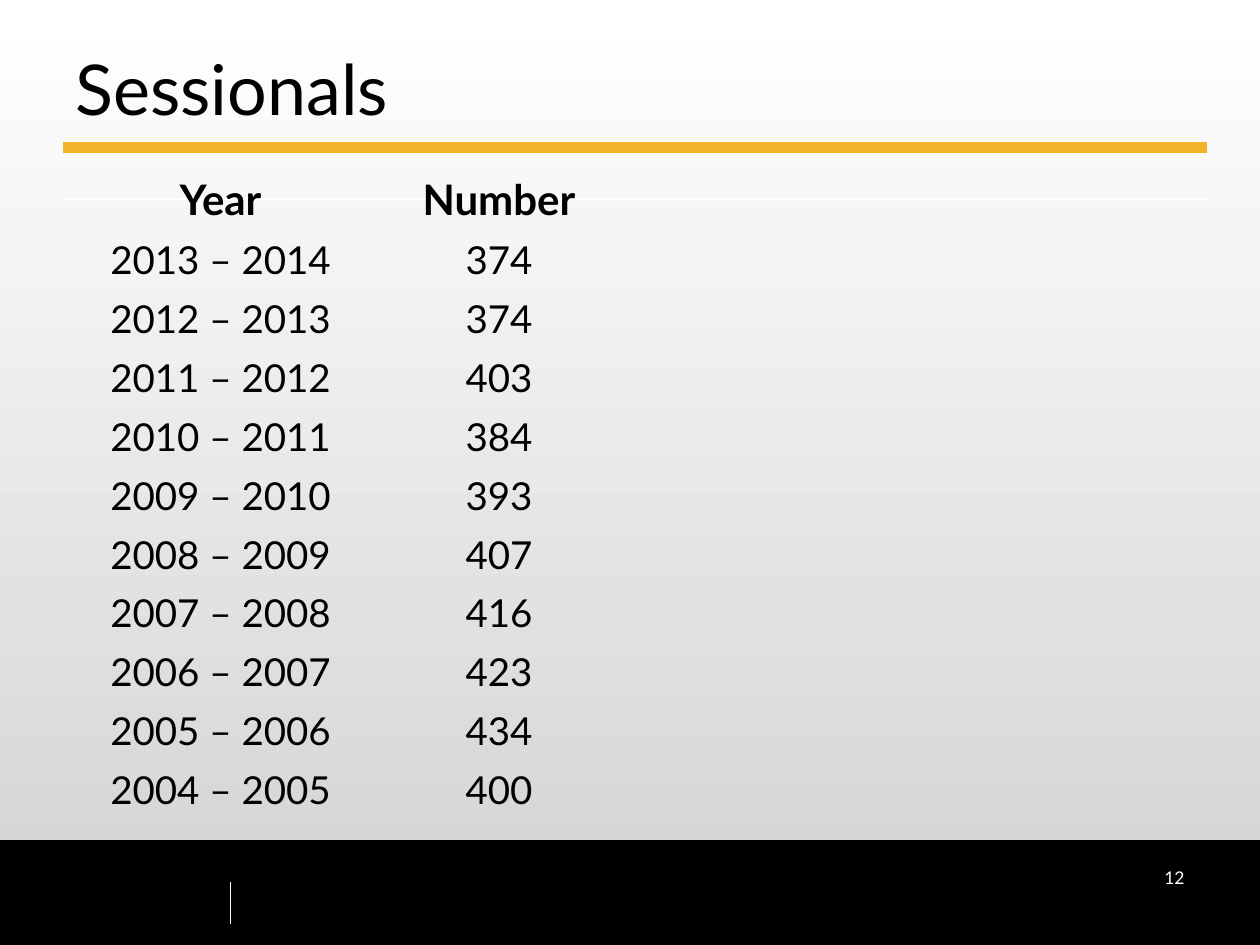
import dataclasses

import pptx
import pptx.dml.color
import pptx.enum.shapes
import pptx.enum.text
import pptx.oxml.ns
import pptx.util
from pptx.util import Inches

ALIGN = pptx.enum.text.PP_ALIGN
ANCHOR = pptx.enum.text.MSO_ANCHOR
PLAIN_TABLE = "{2D5ABB26-0587-4C30-8999-92F81FD0307C}"


@dataclasses.dataclass(frozen=True)
class Theme:
    """Colours, font and type sizes of the deck."""
    font: str = "Lato"
    ink: str = "000000"
    paper: str = "FFFFFF"
    shade: str = "D2D2D2"
    accent: str = "F2B32A"
    title: int = 40
    heading: int = 24
    body: int = 22
    small: int = 10


THEME = Theme()
SESSIONALS = [
    ("2013 – 2014", 374),
    ("2012 – 2013", 374),
    ("2011 – 2012", 403),
    ("2010 – 2011", 384),
    ("2009 – 2010", 393),
    ("2008 – 2009", 407),
    ("2007 – 2008", 416),
    ("2006 – 2007", 423),
    ("2005 – 2006", 434),
    ("2004 – 2005", 400),
]


def rgb(value):
    """Turn a hex string into a colour."""
    return pptx.dml.color.RGBColor.from_string(value)


def write(frame, text, size, color, align, bold=False):
    """Write one formatted paragraph into a text frame."""
    para = frame.paragraphs[0]
    para.alignment = align
    span = para.add_run()
    span.text = text
    span.font.color.rgb = rgb(color)
    formats = {"name": THEME.font, "size": pptx.util.Pt(size), "bold": bold}
    for name, value in formats.items():
        setattr(span.font, name, value)


def add_rule(page, start, end, color, width):
    """Draw a straight line without a shadow."""
    rule = page.shapes.add_connector(
        pptx.enum.shapes.MSO_CONNECTOR.STRAIGHT, *map(Inches, start + end))
    rule.line.color.rgb = rgb(color)
    rule.line.width = pptx.util.Pt(width)
    properties = rule._element.spPr
    properties.append(properties.makeelement(pptx.oxml.ns.qn("a:effectLst"), {}))


def paint_background(page):
    """Shade the page from light at the top to grey at the bottom."""
    fill = page.background.fill
    fill.gradient()
    fill.gradient_angle = 270
    for stop, color in zip(fill.gradient_stops, (THEME.paper, THEME.shade)):
        stop.color.rgb = rgb(color)


def place_footer(page, left, top, width, height):
    """Place the black band, its divider and the page number."""
    band = page.shapes.add_shape(
        pptx.enum.shapes.MSO_SHAPE.RECTANGLE,
        *map(Inches, (left, top, width, height)))
    band.shadow.inherit = False
    band.fill.solid()
    band.fill.fore_color.rgb = rgb(THEME.ink)
    band.line.color.rgb = rgb(THEME.ink)
    band.line.width = pptx.util.Pt(0.75)
    divider = left + 1.83
    add_rule(page, (divider, top + 0.33), (divider, top + 0.66), THEME.paper, 0.75)
    number = page.shapes.add_textbox(
        *map(Inches, (left + width - 2.83, top + 0.16, 2.33, 0.5)))
    number.text_frame.word_wrap = True
    write(number.text_frame, "12", THEME.small, THEME.paper, ALIGN.RIGHT)


def place_heading(page, left, top, width, height):
    """Place the title and the two rules below it."""
    title = page.shapes.title
    box = {"left": left, "top": top, "width": width, "height": height}
    for name, value in box.items():
        setattr(title, name, Inches(value))
    frame = title.text_frame
    formats = {"vertical_anchor": ANCHOR.BOTTOM, "word_wrap": True,
               "auto_size": pptx.enum.text.MSO_AUTO_SIZE.NONE}
    for name, value in formats.items():
        setattr(frame, name, value)
    write(frame, "Sessionals", THEME.title, THEME.ink, ALIGN.LEFT)
    for y, color, weight in ((1.58, THEME.paper, 0.75), (1.17, THEME.accent, 6)):
        add_rule(page, (left, y), (left + 9.08, y), color, weight)


def place_table(page, left, top, width, height):
    """Place the table of sessional staff by year."""
    rows = [("Year", "Number"), *SESSIONALS]
    holder = page.shapes.add_table(
        len(rows), 2, *map(Inches, (left, top, width, height)))
    table = holder.table
    table.first_row = table.horz_banding = False
    table._tbl.tblPr.find(pptx.oxml.ns.qn("a:tableStyleId")).text = PLAIN_TABLE
    for column, span in zip(table.columns, (2, width - 2)):
        column.width = Inches(span)
    for index, values in enumerate(rows):
        table.rows[index].height = Inches(0.41)
        header = index == 0
        size = THEME.heading if header else THEME.body
        for cell, value in zip(table.rows[index].cells, values):
            cell.fill.background()
            write(cell.text_frame, str(value), size, THEME.ink, ALIGN.CENTER, header)
    holder.height = Inches(height)


def main():
    """Build the deck and save it."""
    deck = pptx.Presentation()
    deck.slide_width, deck.slide_height = Inches(10), Inches(7.5)
    page = deck.slides.add_slide(deck.slide_layouts[5])
    paint_background(page)
    place_footer(page, 0, 6.67, 10, 0.83)
    place_heading(page, 0.5, 0.33, 9, 0.75)
    place_table(page, 0.75, 1.33, 4.42, 5.17)
    deck.save("out.pptx")


if __name__ == "__main__":
    main()
